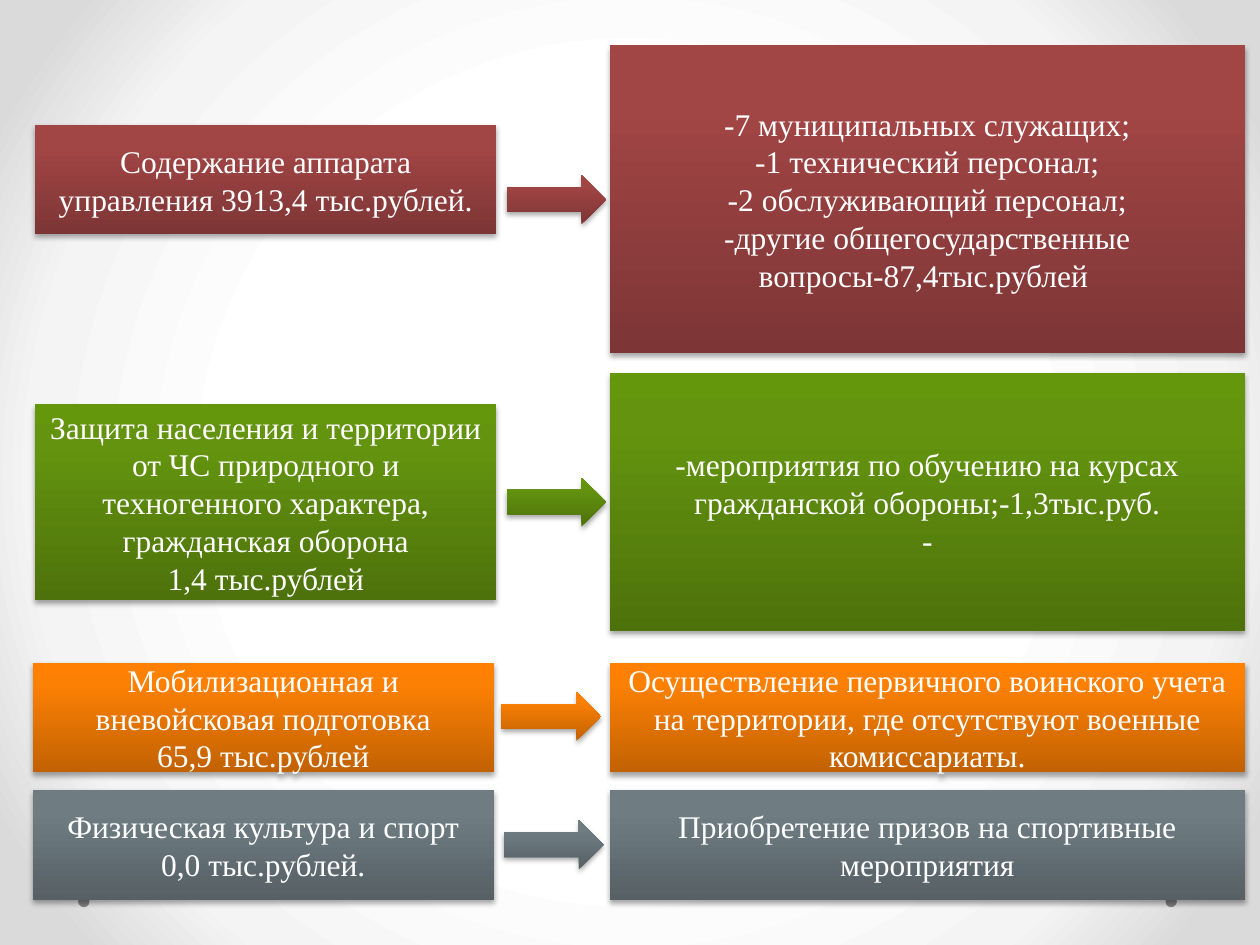
from dataclasses import dataclass

from lxml.etree import SubElement
from pptx import Presentation
from pptx.dml.color import RGBColor
from pptx.enum.shapes import MSO_SHAPE
from pptx.enum.text import MSO_ANCHOR, PP_ALIGN
from pptx.oxml.ns import qn
from pptx.util import Inches, Pt

WIDE, HIGH = Inches(10), Inches(7.5)
COL, ROW = WIDE / 100, HIGH / 100

WHITE = RGBColor(0xFF, 0xFF, 0xFF)
BLACK = RGBColor(0x00, 0x00, 0x00)
GREY = RGBColor(0x80, 0x80, 0x80)
MIST = RGBColor(0xF4, 0xF4, 0xF4)
ASH = RGBColor(0xDA, 0xDA, 0xDA)
RED = (RGBColor(0x7D, 0x35, 0x35), RGBColor(0xA2, 0x45, 0x45), RGBColor(0xA4, 0x43, 0x43))
GREEN = (RGBColor(0x4D, 0x72, 0x0B), RGBColor(0x64, 0x94, 0x0F), RGBColor(0x65, 0x97, 0x0C))
GOLD = (RGBColor(0xC2, 0x62, 0x03), RGBColor(0xFB, 0x80, 0x04), RGBColor(0xFF, 0x80, 0x02))
SLATE = (RGBColor(0x56, 0x60, 0x65), RGBColor(0x6F, 0x7D, 0x83), RGBColor(0x6F, 0x7E, 0x84))


@dataclass(frozen=True)
class Span:
    """Top and height of a box in grid rows."""
    top: float
    high: float


@dataclass(frozen=True)
class Band:
    """One budget item, its arrow and its details."""
    tones: tuple
    left: float
    item: Span
    cost: str
    tip: float
    mid: float
    note: Span
    text: str


BANDS = [
    Band(RED, 2.8, Span(13.2, 11.6),
         "Содержание аппарата управления 3913,4 тыс.рублей.",
         40.2, 18.53, Span(4.8, 32.53),
         "-7 муниципальных служащих;\n-1 технический персонал;\n"
         "-2 обслуживающий персонал;\n"
         "-другие общегосударственные вопросы-87,4тыс.рублей "),
    Band(GREEN, 2.8, Span(42.8, 20.67),
         "Защита населения и территории от ЧС природного и техногенного "
         "характера, гражданская оборона\n1,4 тыс.рублей",
         40.2, 50.53, Span(39.47, 27.33),
         "-мероприятия по обучению на курсах гражданской обороны;-1,3тыс.руб.\n-"),
    Band(GOLD, 2.6, Span(70.13, 11.6),
         "Мобилизационная и вневойсковая подготовка\n65,9 тыс.рублей",
         39.8, 73.2, Span(70.13, 11.6),
         "Осуществление первичного воинского учета на территории, "
         "где отсутствуют военные комиссариаты."),
    Band(SLATE, 2.6, Span(83.6, 11.6),
         "Физическая культура и спорт\n0,0 тыс.рублей.",
         40, 86.8, Span(83.6, 11.6),
         "Приобретение призов на спортивные мероприятия"),
]


def blend(fill, root, tones: tuple, marks: tuple):
    """Give a fill its colour stops and return the gradient without a direction."""
    fill.gradient()
    grad = next(root.iter(qn("a:gradFill")))
    for part in list(grad):
        grad.remove(part)
    stops = SubElement(grad, qn("a:gsLst"))
    for tone, mark in zip(tones, marks):
        stop = SubElement(stops, qn("a:gs"), pos=str(mark * 1000))
        SubElement(stop, qn("a:srgbClr"), val=str(tone))
    return grad


def place(slide, kind, left: float, top: float, wide: float, high: float):
    """Add a plain shape without outline, measured in columns and rows."""
    shape = slide.shapes.add_shape(
        kind, round(left * COL), round(top * ROW), round(wide * COL), round(high * ROW))
    shape.line.fill.background()
    shape.shadow.inherit = False
    return shape


def shade(shape, tones: tuple) -> None:
    """Apply the upright gradient and the soft shadow."""
    props = shape._element.spPr
    grad = blend(shape.fill, props, tones, (0, 80, 100))
    SubElement(grad, qn("a:lin"), ang="16200000", scaled="0")
    glow = SubElement(props.find(qn("a:effectLst")), qn("a:outerShdw"),
                      blurRad=str(Pt(3.1)), dist=str(Pt(1.8)),
                      dir="5400000", rotWithShape="0")
    ink = SubElement(glow, qn("a:srgbClr"), val=str(BLACK))
    SubElement(ink, qn("a:alpha"), val="35000")


def write(shape, text: str) -> None:
    """Set centred white text in a box."""
    frame = shape.text_frame
    frame.text = text
    frame.word_wrap = True
    frame.vertical_anchor = MSO_ANCHOR.MIDDLE
    for para in frame.paragraphs:
        para.alignment = PP_ALIGN.CENTER
        for run in para.runs:
            run.font.name = "Times New Roman"
            run.font.size = Pt(18)
            run.font.color.rgb = WHITE


def draw(slide, band: Band) -> None:
    """Draw the item box, the details box and the arrow of a band."""
    for left, wide, span, text in (
            (band.left, 36.6, band.item, band.cost),
            (48.4, 50.4, band.note, band.text)):
        box = place(slide, MSO_SHAPE.RECTANGLE, left, span.top, wide, span.high)
        shade(box, band.tones)
        write(box, text)
    shade(place(slide, MSO_SHAPE.RIGHT_ARROW, band.tip, band.mid, 7.9, 5.2), band.tones)


def main() -> None:
    """Build and save the slide."""
    deck = Presentation()
    deck.slide_width, deck.slide_height = WIDE, HIGH
    slide = deck.slides.add_slide(deck.slide_layouts[6])
    grad = blend(slide.background.fill, slide._element, (WHITE, MIST, ASH), (50, 76, 92))
    ring = SubElement(grad, qn("a:path"), path="circle")
    SubElement(ring, qn("a:fillToRect"), l="50000", t="50000", r="50000", b="50000")
    for left in (92.5, 6.2):
        dot = place(slide, MSO_SHAPE.OVAL, left, 94.8, 0.9, 1.2)
        dot.fill.solid()
        dot.fill.fore_color.rgb = GREY
    for band in BANDS:
        draw(slide, band)
    deck.save("out.pptx")


if __name__ == "__main__":
    main()
